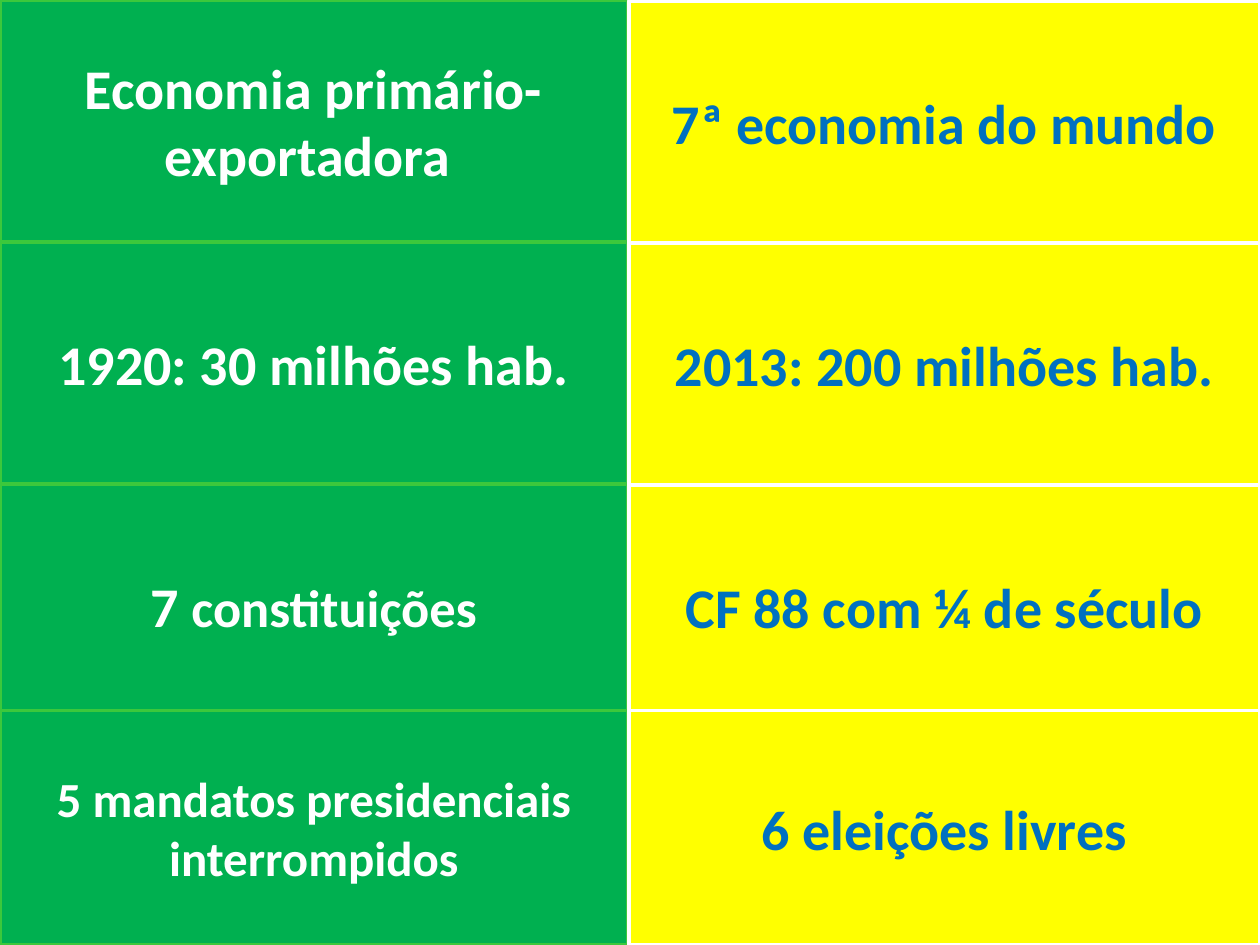
from pptx import Presentation
from pptx.dml.color import RGBColor
from pptx.enum.shapes import MSO_SHAPE
from pptx.enum.text import MSO_ANCHOR, PP_ALIGN
from pptx.util import Inches, Pt

RECTANGLE = MSO_SHAPE.RECTANGLE
MIDDLE = MSO_ANCHOR.MIDDLE
CENTER = PP_ALIGN.CENTER

COLORS = {
    "white": "FFFFFF",
    "frame": "3A5F8C",
    "green": "00B050",
    "green_edge": "3CC83C",
    "yellow": "FFFF00",
    "blue": "0070C0",
}
SLIDE_WIDTH, SLIDE_HEIGHT = 10, 7.5
ROW_HEIGHT, LAST_ROW_HEIGHT = 1.92, 1.86
LINE_WIDTH = 2

# Each statement is a list of (text, size) runs.
PAST = [
    [("Economia primário-exportadora ", 32)],
    [("1920: 30 milhões hab.", 32)],
    [("7 ", 32), ("constituições", 30)],
    [("5 mandatos presidenciais interrompidos", 28)],
]
PRESENT = [
    [("7ª economia do mundo", 32)],
    [("2013: 200 milhões hab.", 32)],
    [("CF 88 com ¼ de século", 32)],
    [("6 eleições livres", 32)],
]


def rgb(name):
    return RGBColor.from_string(COLORS[name])


def add_panel(slide, left, top, width, height, fill, edge):
    panel = slide.shapes.add_shape(
        RECTANGLE, Inches(left), Inches(top), Inches(width), Inches(height))
    panel.shadow.inherit = False
    panel.fill.solid()
    panel.fill.fore_color.rgb = rgb(fill)
    panel.line.color.rgb = rgb(edge)
    panel.line.width = Pt(LINE_WIDTH)
    return panel


def write_statement(panel, statement, color):
    frame = panel.text_frame
    frame.word_wrap = True
    frame.vertical_anchor = MIDDLE
    paragraph = frame.paragraphs[0]
    paragraph.alignment = CENTER
    for text, size in statement:
        run = paragraph.add_run()
        run.text = text
        run.font.name = "Calibri"
        run.font.size = Pt(size)
        run.font.bold = True
        run.font.color.rgb = rgb(color)


def add_column(slide, statements, left, top, width, fill, edge, color):
    """Stack the statements; the last one sits on the slide's bottom edge."""
    last = len(statements) - 1
    for row, statement in enumerate(statements):
        height = LAST_ROW_HEIGHT if row == last else ROW_HEIGHT
        row_top = SLIDE_HEIGHT - height if row == last else top + row * height
        panel = add_panel(slide, left, row_top, width, height, fill, edge)
        write_statement(panel, statement, color)


def main():
    presentation = Presentation()
    presentation.slide_width = Inches(SLIDE_WIDTH)
    presentation.slide_height = Inches(SLIDE_HEIGHT)
    slide = presentation.slides.add_slide(presentation.slide_layouts[6])

    add_panel(slide, 0, 0, SLIDE_WIDTH, SLIDE_HEIGHT, "white", "frame")
    add_column(slide, PAST, 0, 0, 4.98, "green", "green_edge", "white")
    add_column(slide, PRESENT, 4.99, 0.01, 5.01, "yellow", "white", "blue")

    presentation.save("out.pptx")


if __name__ == "__main__":
    main()
